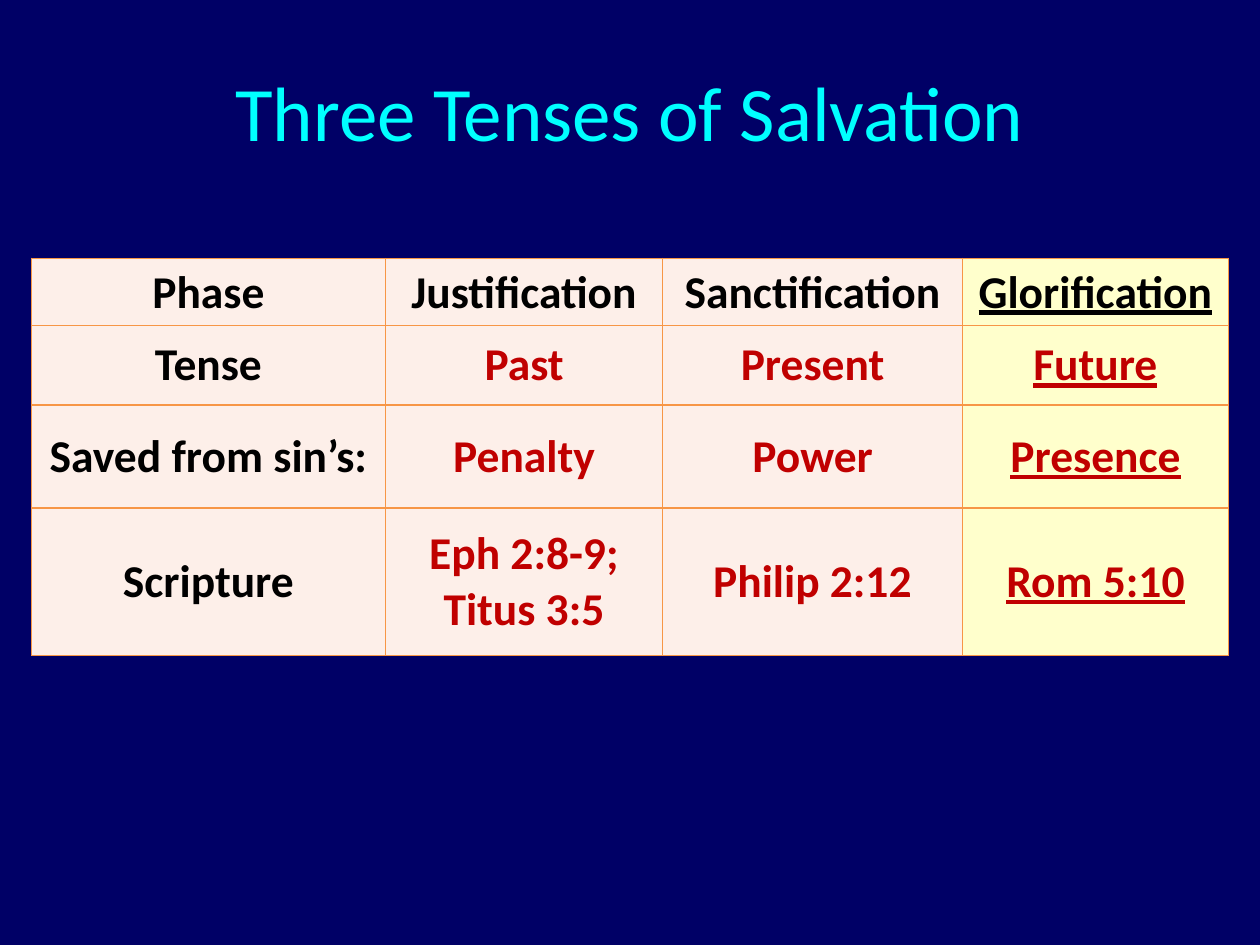
from lxml.etree import SubElement
from pptx import Presentation
from pptx.dml.color import RGBColor
from pptx.enum.text import MSO_ANCHOR, PP_ALIGN
from pptx.oxml.ns import qn
from pptx.util import Inches, Pt

NAVY = RGBColor(0x00, 0x00, 0x66)
CYAN = RGBColor(0x00, 0xFF, 0xFF)
BLACK = RGBColor(0x00, 0x00, 0x00)
RED = RGBColor(0xC0, 0x00, 0x00)
BLUSH = RGBColor(0xFD, 0xEF, 0xE9)
CREAM = RGBColor(0xFF, 0xFF, 0xCC)
ORANGE = RGBColor(0xF7, 0x96, 0x46)

FONT = "Calibri"
COL_WIDTHS = [2.81, 2.2, 2.38, 2.11]
ROW_HEIGHTS = [0.53, 0.63, 0.82, 1.17]
ROWS = [
    ["Phase", "Justification", "Sanctification", "Glorification"],
    ["Tense", "Past", "Present", "Future"],
    ["Saved from sin’s:", "Penalty", "Power", "Presence"],
    ["Scripture", "Eph 2:8-9; Titus 3:5", "Philip 2:12", "Rom 5:10"],
]


def add_text(tf, text, size, color, bold=False, underline=False):
    p = tf.paragraphs[0]
    p.alignment = PP_ALIGN.CENTER
    r = p.add_run()
    r.text = text
    r.font.name = FONT
    r.font.size = Pt(size)
    r.font.color.rgb = color
    r.font.bold = bold
    r.font.underline = underline


def add_title(s, text):
    sp = s.shapes.add_textbox(Inches(0.75), Inches(0.25), Inches(8.5), Inches(1.25))
    tf = sp.text_frame
    tf.word_wrap = True
    tf.vertical_anchor = MSO_ANCHOR.MIDDLE
    add_text(tf, text, 44, CYAN)


def set_borders(cell, color):
    tc_pr = cell._tc.get_or_add_tcPr()
    for side in ("a:lnL", "a:lnR", "a:lnT", "a:lnB"):
        ln = SubElement(tc_pr, qn(side), w=str(Pt(1)))
        fill = SubElement(ln, qn("a:solidFill"))
        SubElement(fill, qn("a:srgbClr"), val=str(color))


def style_cell(cell, fill):
    cell.vertical_anchor = MSO_ANCHOR.MIDDLE
    cell.margin_left = cell.margin_right = Inches(0.1)
    cell.margin_top = cell.margin_bottom = Inches(0.05)
    set_borders(cell, ORANGE)
    cell.fill.solid()
    cell.fill.fore_color.rgb = fill


def add_tenses_table(s):
    table = s.shapes.add_table(
        len(ROWS), len(COL_WIDTHS), Inches(0.25), Inches(2.05),
        Inches(sum(COL_WIDTHS)), Inches(sum(ROW_HEIGHTS)),
    ).table
    for column, width in zip(table.columns, COL_WIDTHS):
        column.width = Inches(width)
    for row, height in zip(table.rows, ROW_HEIGHTS):
        row.height = Inches(height)
    for i, texts in enumerate(ROWS):
        for j, text in enumerate(texts):
            cell = table.cell(i, j)
            is_heading = i == 0 or j == 0
            is_future = j == len(texts) - 1
            style_cell(cell, CREAM if is_future else BLUSH)
            add_text(cell.text_frame, text, 26, BLACK if is_heading else RED,
                     bold=True, underline=is_future)


def main():
    prs = Presentation()
    prs.slide_width = Inches(10)
    prs.slide_height = Inches(7.5)
    s = prs.slides.add_slide(prs.slide_layouts[6])
    s.background.fill.solid()
    s.background.fill.fore_color.rgb = NAVY
    add_title(s, "Three Tenses of Salvation")
    add_tenses_table(s)
    prs.save("out.pptx")


if __name__ == "__main__":
    main()
